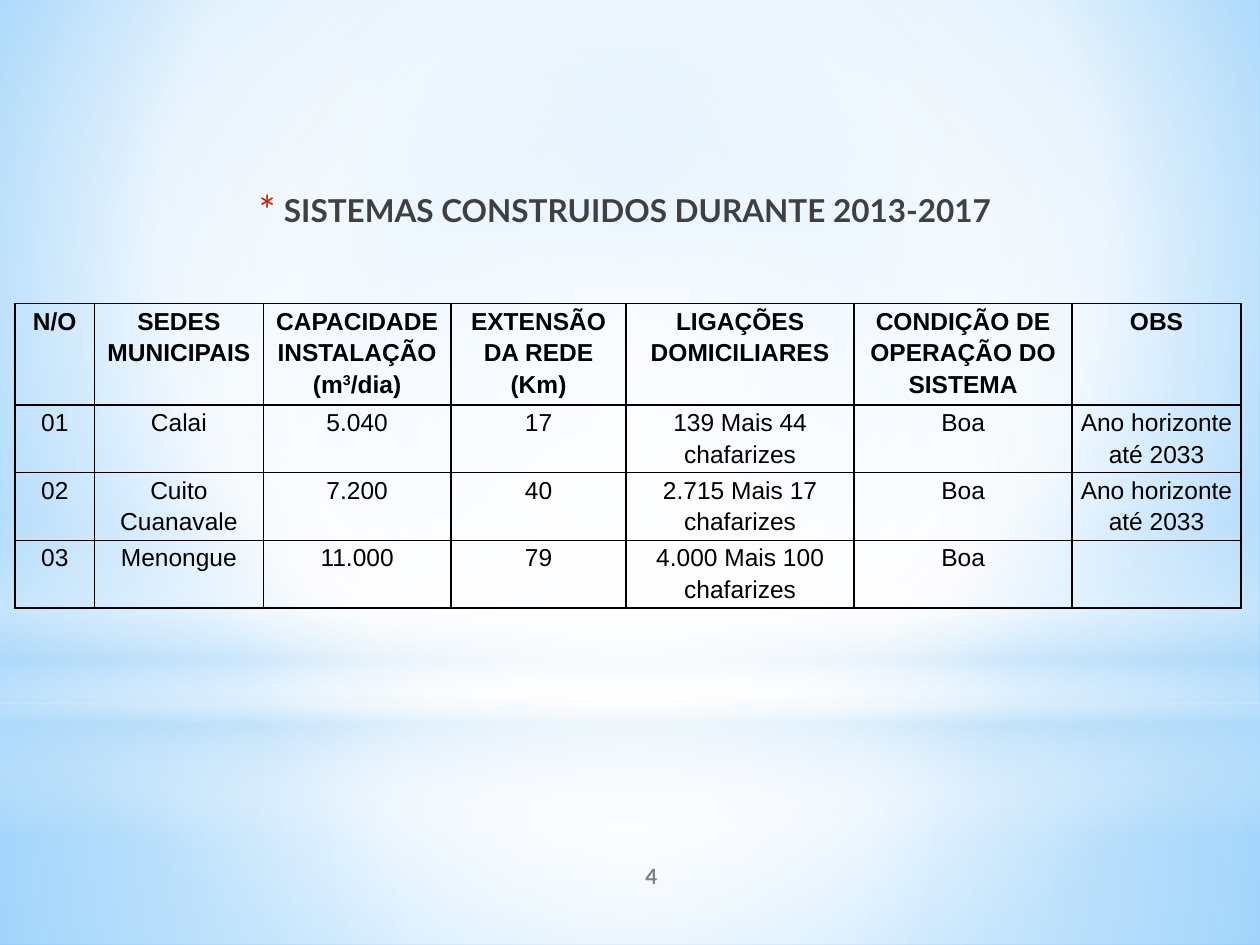
from lxml.etree import SubElement
from pptx import Presentation
from pptx.dml.color import RGBColor as RGB
from pptx.enum.shapes import MSO_SHAPE as SHAPE
from pptx.enum.text import MSO_ANCHOR as ANCHOR, PP_ALIGN as ALIGN
from pptx.oxml.ns import qn
from pptx.util import Inches, Pt

TITLE = "SISTEMAS CONSTRUIDOS DURANTE 2013-2017"
PAGE = "4"
ROWS = [
    ("N/O", "SEDES MUNICIPAIS", "CAPACIDADE INSTALAÇÃO\n(m^3^/dia)", "EXTENSÃO DA REDE (Km)",
     "LIGAÇÕES DOMICILIARES", "CONDIÇÃO DE OPERAÇÃO DO SISTEMA", "OBS"),
    ("01", "Calai", "5.040", "17", "139 Mais 44 chafarizes", "Boa", "Ano horizonte até 2033"),
    ("02", "Cuito Cuanavale", "7.200", "40", "2.715 Mais 17 chafarizes", "Boa",
     "Ano horizonte até 2033"),
    ("03", "Menongue", "11.000", "79", "4.000 Mais 100 chafarizes", "Boa", ""),
]
COL_WIDTHS = [0.63, 1.34, 1.49, 1.39, 1.81, 1.73, 1.34]
ROW_HEIGHTS = [0.76, 0.5, 0.5, 0.5]
THEME = {
    "heading_font": "Lato", "body_font": "Arial",
    "title": "404040", "page": "808080", "bullet": "C3260C", "ink": "000000",
    "title_size": 18, "page_size": 12, "cell_size": 14, "border": 1,
    "white": "FFFFFF", "haze": "B4DCFA", "sky": "9ED5FF", "deep": "5BB9FF",
}
CENTRE = (50, 50, 50, 50)
BACKDROP = {"stops": [(0, "sky", 100), (60, "white", 100), (100, "deep", 100)],
            "focus": (20, 10, 20, 60)}
LAYERS = [
    (SHAPE.RECTANGLE, (0, 5.58, 10, 1.92),
     {"stops": [(0, "white", 91), (37, "white", 76), (100, "haze", 79)], "focus": CENTRE}),
    (SHAPE.RECTANGLE, (0, 0, 10, 5.58),
     {"stops": [(0, "white", 89), (48, "white", 62), (100, "haze", 79)], "focus": CENTRE}),
    (SHAPE.RECTANGLE, (0, 4.12, 10, 2.5),
     {"stops": [(0, "white", 0), (29, "white", 30), (45, "haze", 40), (55, "white", 26),
                (65, "haze", 60), (100, "white", 0)], "angle": 90}),
    (SHAPE.OVAL, (0, 1.75, 10, 5.58),
     {"stops": [(0, "white", 100), (56, "white", 0)], "focus": CENTRE}),
]


def add(parent, tag, **attrs):
    return SubElement(parent, qn(tag), {k: str(v) for k, v in attrs.items()})


def set_gradient(fill, owner, stops, focus=None, angle=0):
    fill.gradient()
    grad = next(owner.iter(qn("a:gradFill")))
    for child in list(grad):
        grad.remove(child)
    stop_list = add(grad, "a:gsLst")
    for pos, color, opacity in stops:
        stop = add(stop_list, "a:gs", pos=pos * 1000)
        add(add(stop, "a:srgbClr", val=THEME[color]), "a:alpha", val=opacity * 1000)
    if focus:
        circle = add(grad, "a:path", path="circle")
        add(circle, "a:fillToRect", **{k: v * 1000 for k, v in zip("ltrb", focus)})
    else:
        add(grad, "a:lin", ang=angle * 60000, scaled=0)


def put_text(tf, text, *, size, font, color, bold=False, spacing=None):
    tf.word_wrap = True
    for i, line in enumerate(text.split("\n")):
        p = tf.add_paragraph() if i else tf.paragraphs[0]
        p.alignment = ALIGN.CENTER
        p.line_spacing = spacing
        for j, piece in enumerate(line.split("^")):
            if not piece:
                continue
            r = p.add_run()
            r.text = piece
            r.font.size, r.font.name, r.font.bold = Pt(size), font, bold
            r.font.color.rgb = RGB.from_string(color)
            if j % 2:
                r.font._element.set("baseline", "30000")


def add_bullet(p, char):
    p.space_after = Pt(3)
    ppr = p._p.get_or_add_pPr()
    ppr.set("marL", str(Inches(0.25)))
    ppr.set("indent", str(Inches(-0.2)))
    add(add(ppr, "a:buClr"), "a:srgbClr", val=THEME["bullet"])
    add(ppr, "a:buSzPct", val=128000)
    add(ppr, "a:buFont", typeface=THEME["heading_font"])
    add(ppr, "a:buChar", char=char)


def set_borders(cell):
    tcpr = cell._tc.get_or_add_tcPr()
    for i, side in enumerate("LRTB"):
        ln = add(tcpr, f"a:ln{side}", w=Pt(THEME["border"]))
        add(add(ln, "a:solidFill"), "a:srgbClr", val=THEME["ink"])
        tcpr.insert(i, ln)


def add_systems_table(s):
    frame = s.shapes.add_table(len(ROWS), len(COL_WIDTHS), Inches(0.12), Inches(2.41),
                               Inches(sum(COL_WIDTHS)), Inches(sum(ROW_HEIGHTS)))
    table = frame.table
    table.first_row = table.horz_banding = False
    for col, width in zip(table.columns, COL_WIDTHS):
        col.width = Inches(width)
    for i, (row, height, texts) in enumerate(zip(table.rows, ROW_HEIGHTS, ROWS)):
        row.height = Inches(height)
        for cell, text in zip(row.cells, texts):
            cell.margin_left = cell.margin_right = Inches(0.05)
            cell.margin_top = cell.margin_bottom = 0
            cell.fill.background()
            set_borders(cell)
            put_text(cell.text_frame, text, size=THEME["cell_size"], font=THEME["body_font"],
                     color=THEME["ink"], bold=i == 0, spacing=1.15)


def main():
    """Build the slide on water systems built during 2013-2017."""
    prs = Presentation()
    prs.slide_width, prs.slide_height = Inches(10), Inches(7.5)
    s = prs.slides.add_slide(prs.slide_layouts[6])
    set_gradient(s.background.fill, s.element, **BACKDROP)
    for kind, box, gradient in LAYERS:
        sp = s.shapes.add_shape(kind, *map(Inches, box))
        sp.shadow.inherit = False
        sp.line.fill.background()
        set_gradient(sp.fill, sp.element, **gradient)

    tf = s.shapes.add_textbox(*map(Inches, (4.17, 6.75, 2, 0.4))).text_frame
    tf.vertical_anchor = ANCHOR.MIDDLE
    put_text(tf, PAGE, size=THEME["page_size"], font=THEME["heading_font"],
             color=THEME["page"], bold=True)

    tf = s.shapes.add_textbox(*map(Inches, (0.98, 1.47, 7.91, 0.47))).text_frame
    put_text(tf, TITLE, size=THEME["title_size"], font=THEME["heading_font"],
             color=THEME["title"], bold=True)
    add_bullet(tf.paragraphs[0], "*")
    add_systems_table(s)
    prs.save("out.pptx")


if __name__ == "__main__":
    main()
